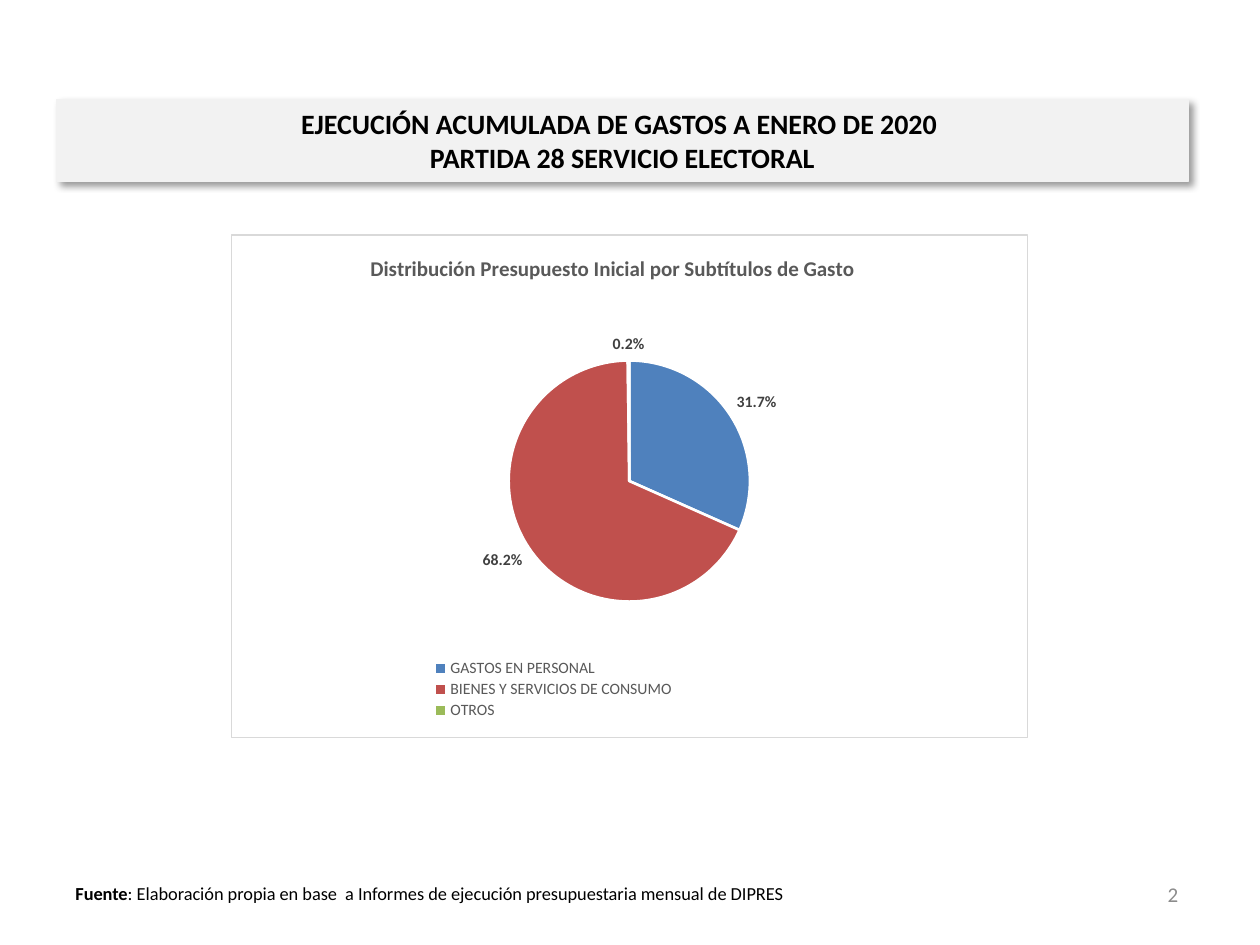
"""Build the budget execution slide with its pie chart of spending by subtitle."""
from dataclasses import dataclass

from pptx import Presentation, util as u
from pptx.chart.data import CategoryChartData
from pptx.dml.color import RGBColor
from pptx.enum import chart as ch, text
from pptx.oxml import parse_xml
from pptx.oxml.ns import nsdecls, qn

W, H = 10, 7.5
FONT = "Calibri"


@dataclass
class Box:
    """Place on the slide, as shares of its width and height."""
    x: float
    y: float
    w: float
    h: float

    def emu(self) -> list:
        return [u.Inches(v * size) for v, size in zip((self.x, self.y, self.w, self.h), (W, H, W, H))]


@dataclass
class Slice:
    """One spending subtitle: name, percentage and colour."""
    name: str
    value: float
    color: str


SLICES = [
    Slice("GASTOS EN PERSONAL", 31.7, "4F81BD"),
    Slice("BIENES Y SERVICIOS DE CONSUMO", 68.2, "C0504D"),
    Slice("OTROS", 0.2, "9BBB59"),
]


def rgb(hex_color: str) -> RGBColor:
    return RGBColor.from_string(hex_color)


def style_font(font, size: float, color: str, bold: bool = False) -> None:
    for key, value in {"name": FONT, "size": u.Pt(size), "bold": bold}.items():
        setattr(font, key, value)
    font.color.rgb = rgb(color)


def paint(fmt, fill: str, line: str, width: float) -> None:
    fmt.fill.solid()
    fmt.fill.fore_color.rgb = rgb(fill)
    fmt.line.color.rgb = rgb(line)
    fmt.line.width = u.Pt(width)


def add_text(s, box: Box, runs: list, size: float, color: str, align, anchor) -> None:
    """Add a one-paragraph text box from (text, bold) runs."""
    sp = s.shapes.add_textbox(*box.emu())
    tf = sp.text_frame
    tf.word_wrap, tf.vertical_anchor = True, anchor
    p = tf.paragraphs[0]
    p.alignment = align
    for words, bold in runs:
        r = p.add_run()
        r.text = words
        style_font(r.font, size, color, bold)


def format_title(sp, box: Box, words: str) -> None:
    """Turn the title placeholder into a shaded band with a soft shadow."""
    sp.left, sp.top, sp.width, sp.height = box.emu()
    paint(sp, "F2F2F2", "F2F2F2", 0.75)
    sp._element.spPr.append(parse_xml(
        f'<a:effectLst {nsdecls("a")}><a:outerShdw blurRad="{u.Pt(4)}" dist="{u.Pt(3)}" '
        'dir="2700000" algn="tl" rotWithShape="0"><a:srgbClr val="000000">'
        '<a:alpha val="40000"/></a:srgbClr></a:outerShdw></a:effectLst>'))
    tf = sp.text_frame
    tf.text = words
    tf.auto_size = text.MSO_AUTO_SIZE.NONE
    tf.vertical_anchor = text.MSO_ANCHOR.MIDDLE
    p = tf.paragraphs[0]
    p.alignment = text.PP_ALIGN.CENTER
    for r in p.runs:
        style_font(r.font, 16, "000000", True)


def set_layout(parent, after: str | None, inner: bool = False, **shares: float) -> None:
    """Place a chart part by shares of the chart's size."""
    for old in parent.findall(qn("c:layout")):
        parent.remove(old)
    target = '<c:layoutTarget val="inner"/>' if inner else ""
    modes = '<c:xMode val="edge"/><c:yMode val="edge"/>'
    values = "".join(f'<c:{k} val="{v}"/>' for k, v in shares.items())
    layout = parse_xml(f'<c:layout {nsdecls("c")}><c:manualLayout>{target}{modes}{values}'
                       '</c:manualLayout></c:layout>')
    if after:
        parent.find(qn(after)).addnext(layout)
    else:
        parent.insert(0, layout)


def add_pie(s, box: Box, title: str, slices: list[Slice]) -> None:
    """Add the framed pie chart with labels, title and legend."""
    data = CategoryChartData()
    data.categories = [item.name for item in slices]
    data.add_series("Gasto", [item.value for item in slices])
    chart = s.shapes.add_chart(ch.XL_CHART_TYPE.PIE, *box.emu(), data).chart
    style_font(chart.font, 10, "000000")

    chart.has_title = True
    tf = chart.chart_title.text_frame
    tf.text = title
    style_font(tf.paragraphs[0].runs[0].font, 12, "595959", True)
    chart.has_legend = True
    chart.legend.position = ch.XL_LEGEND_POSITION.BOTTOM
    chart.legend.include_in_layout = False
    style_font(chart.legend.font, 9, "595959")

    plot = chart.plots[0]
    for i, item in enumerate(slices):
        paint(plot.series[0].points[i].format, item.color, "FFFFFF", 1.5)
    plot.has_data_labels = True
    labels = plot.data_labels
    for key, value in {"show_value": True, "number_format": '0.0"%"', "number_format_is_linked": False,
                       "position": ch.XL_LABEL_POSITION.OUTSIDE_END}.items():
        setattr(labels, key, value)
    style_font(labels.font, 9, "404040", True)

    root = chart._chartSpace.find(qn("c:chart"))
    set_layout(root.find(qn("c:title")), "c:tx", x=0.17, y=0.03)
    set_layout(root.find(qn("c:legend")), "c:legendPos", x=0.24, y=0.84, w=0.33, h=0.13)
    set_layout(root.find(qn("c:plotArea")), None, True, x=0.01, y=0.25, w=0.98, h=0.48)
    root.addprevious(parse_xml(f'<c:roundedCorners {nsdecls("c")} val="0"/>'))
    root.addnext(parse_xml(
        f'<c:spPr {nsdecls("c", "a")}><a:solidFill><a:srgbClr val="FFFFFF"/></a:solidFill>'
        f'<a:ln w="{u.Pt(0.75)}"><a:solidFill><a:srgbClr val="D9D9D9"/></a:solidFill></a:ln></c:spPr>'))


def main() -> None:
    prs = Presentation()
    prs.slide_width, prs.slide_height = u.Inches(W), u.Inches(H)
    s = prs.slides.add_slide(prs.slide_layouts[5])
    format_title(s.shapes.title, Box(0.045, 0.105, 0.898, 0.087),
                 "EJECUCIÓN ACUMULADA DE GASTOS A ENERO DE 2020 \vPARTIDA 28 SERVICIO ELECTORAL")
    add_pie(s, Box(0.183, 0.248, 0.633, 0.533),
            "Distribución Presupuesto Inicial por Subtítulos de Gasto", SLICES)
    add_text(s, Box(0.05, 0.927, 0.591, 0.037),
             [("Fuente", True),
              (": Elaboración propia en base  a Informes de ejecución presupuestaria mensual de DIPRES", False)],
             10.5, "000000", text.PP_ALIGN.LEFT, text.MSO_ANCHOR.TOP)
    add_text(s, Box(0.712, 0.92, 0.233, 0.053), [("2", False)],
             12, "8C8C8C", text.PP_ALIGN.RIGHT, text.MSO_ANCHOR.MIDDLE)
    prs.save("out.pptx")


if __name__ == "__main__":
    main()
